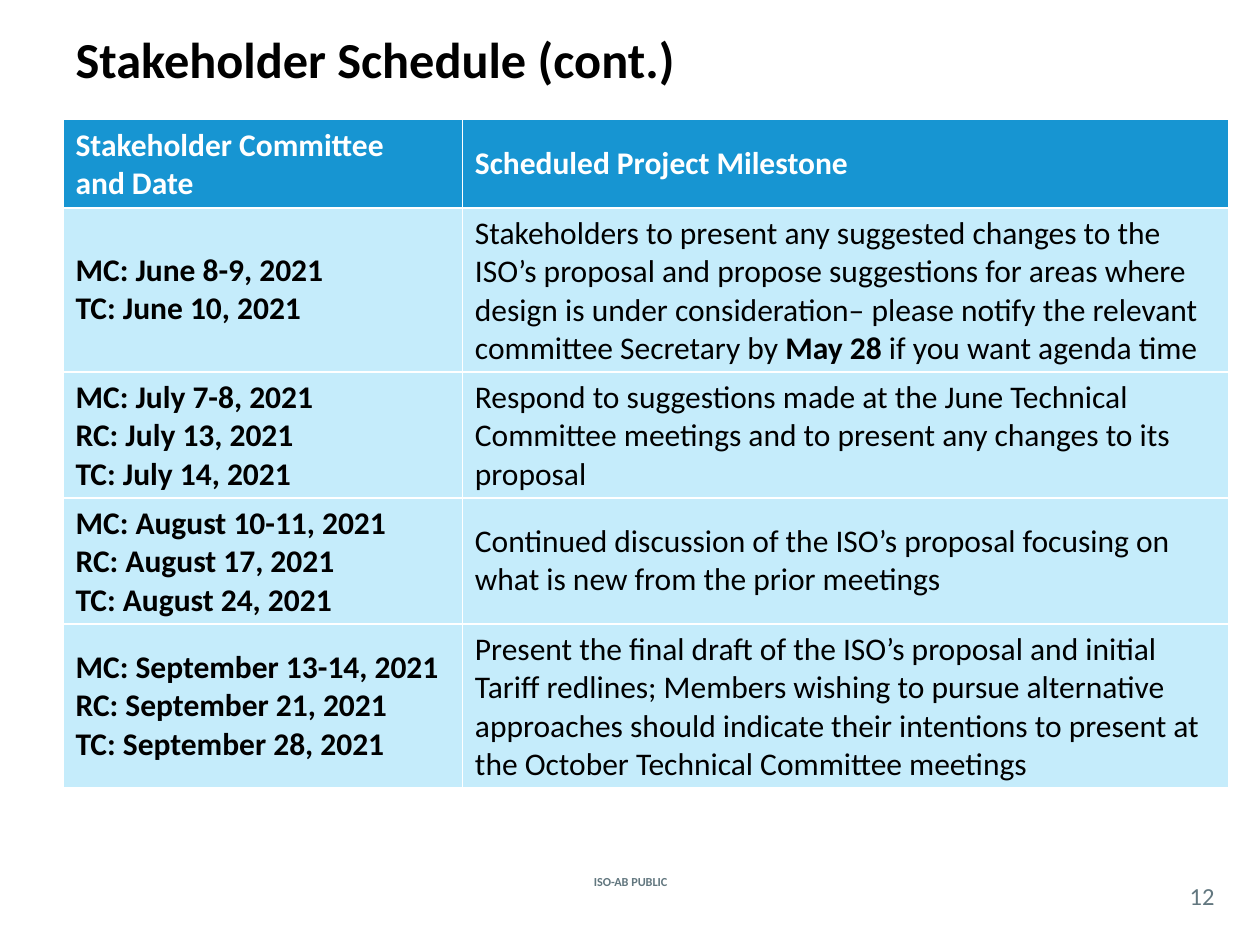
from pptx import Presentation
from pptx import util as u
from pptx.dml.color import RGBColor
from pptx.enum import text

FONT = "Calibri"
COLORS = {"header": "1795D2", "body": "C5ECFB", "white": "FFFFFF",
          "black": "000000", "grey": "62777F"}
COL_WIDTHS = [3.17, 6.08]
ROW_HEIGHTS = [0.69, 1.28, 0.99, 0.99, 1.28]
HEADER = (["Stakeholder Committee", "and Date"], ["Scheduled Project Milestone"])
# Each milestone is a list of runs; every second run is bold.
SCHEDULE = [
    (["MC: June 8-9, 2021", "TC: June 10, 2021"],
     ["Stakeholders to present any suggested changes to the ISO’s proposal and "
      "propose suggestions for areas where design is under consideration– please "
      "notify the relevant committee Secretary by ",
      "May 28", " if you want agenda time"]),
    (["MC: July 7-8, 2021", "RC: July 13, 2021", "TC: July 14, 2021"],
     ["Respond to suggestions made at the June Technical Committee meetings and "
      "to present any changes to its proposal"]),
    (["MC: August 10-11, 2021", "RC: August 17, 2021", "TC: August 24, 2021"],
     ["Continued discussion of the ISO’s proposal focusing on what is new from "
      "the prior meetings"]),
    (["MC: September 13-14, 2021", "RC: September 21, 2021", "TC: September 28, 2021"],
     ["Present the final draft of the ISO’s proposal and initial Tariff redlines; "
      "Members wishing to pursue alternative approaches should indicate their "
      "intentions to present at the October Technical Committee meetings"]),
]


def rgb(name):
    return RGBColor.from_string(COLORS[name])


def style(p, size, color, bold=None, align=text.PP_ALIGN.LEFT):
    p.alignment = align
    p.font.name = FONT
    p.font.size = u.Pt(size)
    p.font.color.rgb = rgb(color)
    p.font.bold = bold


def add_title(slide, words):
    sp = slide.shapes.title
    sp.left, sp.top = u.Inches(0.5), u.Inches(0.17)
    sp.width, sp.height = u.Inches(9), u.Inches(0.58)
    tf = sp.text_frame
    tf.text = words
    tf.vertical_anchor = text.MSO_ANCHOR.MIDDLE
    style(tf.paragraphs[0], 28.8, "black", True)


def add_label(slide, words, box, size, bold=False):
    """Centred grey footer text without margins."""
    tf = slide.shapes.add_textbox(*map(u.Inches, box)).text_frame
    tf.word_wrap = True
    tf.margin_left = tf.margin_right = tf.margin_top = tf.margin_bottom = 0
    tf.vertical_anchor = text.MSO_ANCHOR.MIDDLE
    tf.text = words
    style(tf.paragraphs[0], size, "grey", bold, text.PP_ALIGN.CENTER)


def format_cell(cell, fill):
    cell.fill.solid()
    cell.fill.fore_color.rgb = rgb(fill)
    cell.vertical_anchor = text.MSO_ANCHOR.MIDDLE


def fill_lines(cell, lines, fill, color):
    """Bold text, one paragraph a line."""
    format_cell(cell, fill)
    cell.text_frame.text = "\n".join(lines)
    for p in cell.text_frame.paragraphs:
        style(p, 18, color, True)


def fill_milestone(cell, runs):
    format_cell(cell, "body")
    p = cell.text_frame.paragraphs[0]
    style(p, 18, "black")
    for i, words in enumerate(runs):
        r = p.add_run()
        r.text = words
        r.font.bold = i % 2 == 1


def add_schedule(slide):
    table = slide.shapes.add_table(
        len(ROW_HEIGHTS), len(COL_WIDTHS), u.Inches(0.5), u.Inches(0.95),
        u.Inches(sum(COL_WIDTHS)), u.Inches(sum(ROW_HEIGHTS))).table
    table.horz_banding = False
    for column, width in zip(table.columns, COL_WIDTHS):
        column.width = u.Inches(width)
    for row, height in zip(table.rows, ROW_HEIGHTS):
        row.height = u.Inches(height)
    for col, lines in enumerate(HEADER):
        fill_lines(table.cell(0, col), lines, "header", "white")
    for row, (dates, milestone) in enumerate(SCHEDULE, 1):
        fill_lines(table.cell(row, 0), dates, "body", "black")
        fill_milestone(table.cell(row, 1), milestone)


def main():
    prs = Presentation()
    prs.slide_width, prs.slide_height = u.Inches(10), u.Inches(7.5)
    slide = prs.slides.add_slide(prs.slide_layouts[5])
    add_label(slide, "ISO-AB PUBLIC", (4.27, 6.75, 1.47, 0.5), 7, True)
    add_title(slide, "Stakeholder Schedule (cont.)")
    add_label(slide, "12", (9.33, 6.96, 0.42, 0.29), 14)
    add_schedule(slide)
    prs.save("out.pptx")


if __name__ == "__main__":
    main()
